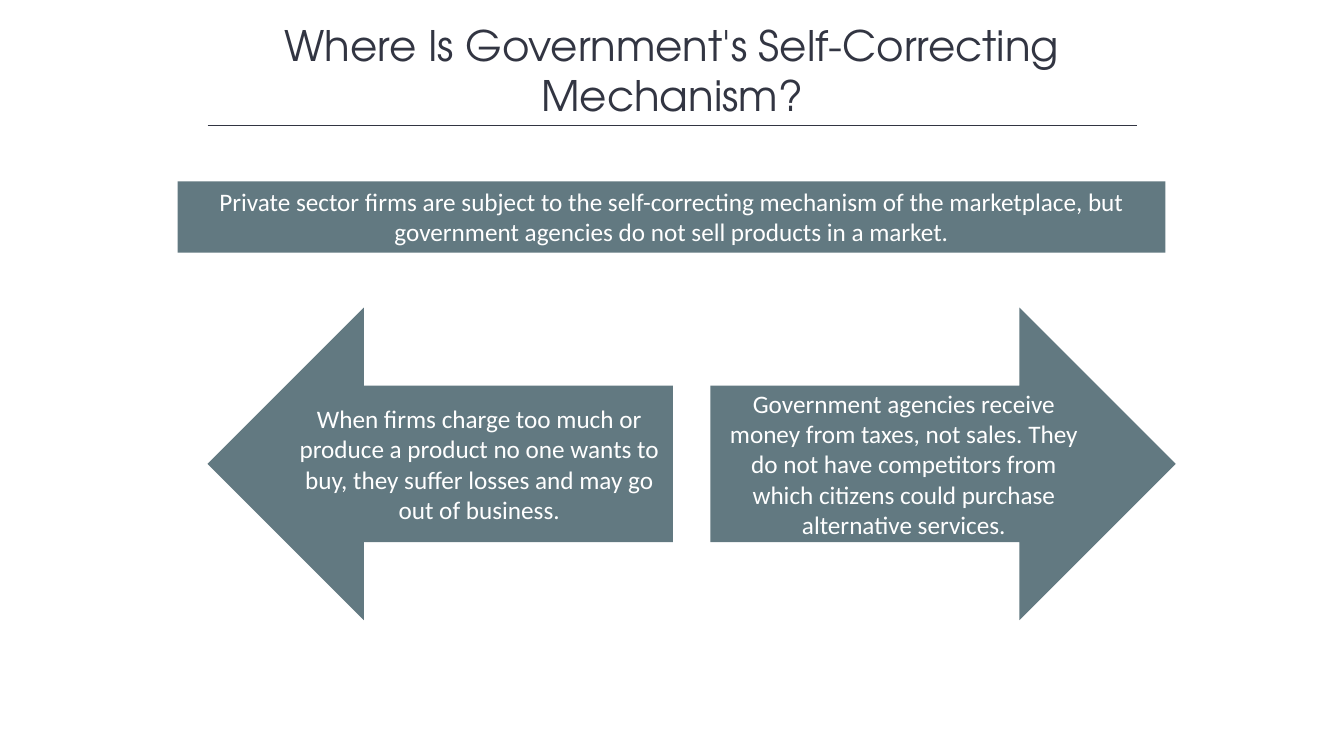
import pptx
import pptx.dml.color
import pptx.enum.shapes
import pptx.enum.text
import pptx.oxml.ns
import pptx.util
from lxml import etree

Cm = pptx.util.Cm
Pt = pptx.util.Pt
SHAPE = pptx.enum.shapes.MSO_SHAPE
ANCHOR = pptx.enum.text.MSO_ANCHOR

COLORS = {"ink": "323542", "slate": "627981", "white": "FFFFFF"}


def rgb(name):
    return pptx.dml.color.RGBColor.from_string(COLORS[name])


def write(tf, text, font="Calibri", size=18, color="white", anchor=ANCHOR.MIDDLE):
    tf.word_wrap = True
    tf.vertical_anchor = anchor
    p = tf.paragraphs[0]
    p.alignment = pptx.enum.text.PP_ALIGN.CENTER
    r = p.add_run()
    r.text = text
    r.font.name = font
    r.font.size = Pt(size)
    r.font.color.rgb = rgb(color)


class SlideBuilder:
    def __init__(self, s):
        self.s = s

    def title(self, text, left, top, width, height):
        box = self.s.shapes.add_textbox(Cm(left), Cm(top), Cm(width), Cm(height))
        write(box.text_frame, text, font="TeX Gyre Adventor", size=30,
              color="ink", anchor=ANCHOR.TOP)

    def rule(self, left, right, y):
        """Draw a thin horizontal line."""
        line = self.s.shapes.add_connector(
            pptx.enum.shapes.MSO_CONNECTOR.STRAIGHT, Cm(left), Cm(y), Cm(right), Cm(y))
        line.line.color.rgb = rgb("ink")
        line.line.width = Pt(1)
        etree.SubElement(line._element.spPr, pptx.oxml.ns.qn("a:effectLst"))

    def block(self, kind, text, left, top, width, height, **text_format):
        """Draw a filled shape with centred text."""
        sp = self.s.shapes.add_shape(kind, Cm(left), Cm(top), Cm(width), Cm(height))
        sp.shadow.inherit = False
        sp.fill.solid()
        sp.fill.fore_color.rgb = rgb("slate")
        sp.line.fill.background()
        write(sp.text_frame, text, **text_format)


def main():
    prs = pptx.Presentation()
    prs.slide_width, prs.slide_height = Cm(33.87), Cm(19.05)
    slide = SlideBuilder(prs.slides.add_slide(prs.slide_layouts[6]))

    slide.title("Where Is Government's Self-Correcting Mechanism?", 4.24, 0.36, 25.4, 2.82)
    slide.rule(5.23, 28.65, 3.16)
    slide.block(SHAPE.RECTANGLE,
                "Private sector firms are subject to the self-correcting mechanism of the "
                "marketplace, but government agencies do not sell products in a market.",
                4.48, 4.57, 24.89, 1.8, anchor=ANCHOR.TOP)

    arrows = [
        (SHAPE.LEFT_ARROW, 5.23,
         "When firms charge too much or produce a product no one wants to buy, "
         "they suffer losses and may go out of business."),
        (SHAPE.RIGHT_ARROW, 17.9,
         "Government agencies receive money from taxes, not sales. They do not have "
         "competitors from which citizens could purchase alternative services."),
    ]
    for kind, left, text in arrows:
        slide.block(kind, text, left, 7.75, 11.73, 7.88)

    prs.save("out.pptx")


if __name__ == "__main__":
    main()
